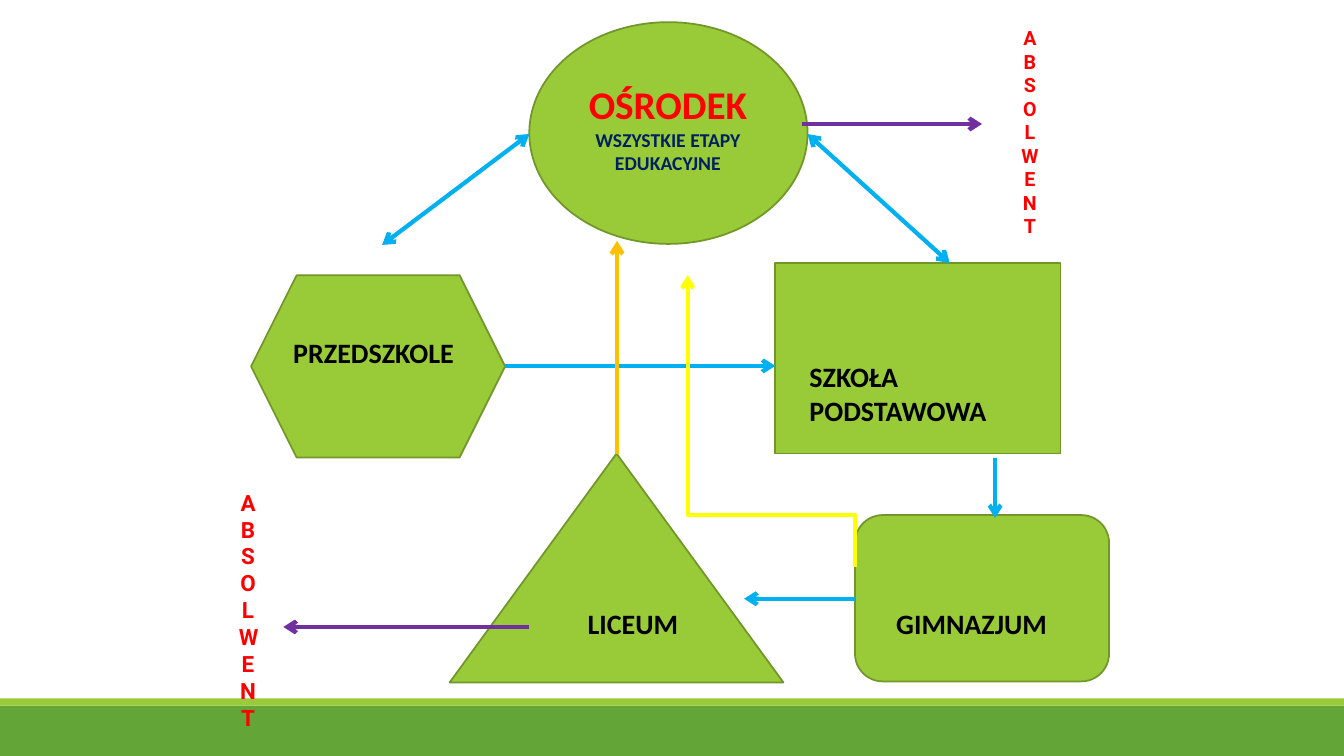
from dataclasses import dataclass

import pptx
import pptx.dml.color
import pptx.enum.shapes
import pptx.enum.text
import pptx.oxml
import pptx.oxml.ns
import pptx.util
from lxml import etree

SHAPE = pptx.enum.shapes.MSO_SHAPE
CONNECTOR = pptx.enum.shapes.MSO_CONNECTOR
ALIGN = pptx.enum.text.PP_ALIGN
EMU_PER_PX = 9144  # 100 px to the inch


@dataclass(frozen=True)
class Theme:
    green: str = "99CB38"
    outline: str = "719629"
    footer: str = "63A537"
    black: str = "000000"
    red: str = "FF0000"
    navy: str = "002060"
    blue: str = "00B0F0"
    orange: str = "FFC000"
    purple: str = "7030A0"
    yellow: str = "FFFF00"
    body_font: str = "Calibri"
    graduate_font: str = "Roboto"
    title_size: int = 28
    label_size: int = 20
    graduate_size: int = 16
    small_size: int = 14
    outline_width: float = 1.25
    arrow_width: int = 3


def px(value):
    return pptx.util.Emu(value * EMU_PER_PX)


def rgb(color):
    return pptx.dml.color.RGBColor.from_string(color)


class Diagram:
    def __init__(self, slide, theme):
        self.slide = slide
        self.theme = theme

    def block(self, kind, left, top, width, height, fill=None, outlined=True):
        shape = self.slide.shapes.add_shape(kind, px(left), px(top), px(width), px(height))
        shape.shadow.inherit = False
        shape.fill.solid()
        shape.fill.fore_color.rgb = rgb(fill or self.theme.green)
        if outlined:
            shape.line.color.rgb = rgb(self.theme.outline)
            shape.line.width = pptx.util.Pt(self.theme.outline_width)
        else:
            shape.line.fill.background()

    def text(self, left, top, width, height, lines, align=ALIGN.LEFT, font=None):
        """Each line is (text, size, color) and becomes a bold paragraph."""
        box = self.slide.shapes.add_textbox(px(left), px(top), px(width), px(height))
        frame = box.text_frame
        frame.word_wrap = True
        frame.auto_size = pptx.enum.text.MSO_AUTO_SIZE.SHAPE_TO_FIT_TEXT
        for index, (content, size, color) in enumerate(lines):
            paragraph = frame.add_paragraph() if index else frame.paragraphs[0]
            paragraph.text = content
            paragraph.alignment = align
            paragraph.font.name = font or self.theme.body_font
            paragraph.font.size = pptx.util.Pt(size)
            paragraph.font.bold = True
            paragraph.font.color.rgb = rgb(color)

    def label(self, left, top, width, height, content):
        self.text(left, top, width, height, [(content, self.theme.label_size, self.theme.black)])

    def vertical_word(self, left, top, width, height, word, size):
        lines = [(letter, size, self.theme.red) for letter in word]
        self.text(left, top, width, height, lines, ALIGN.CENTER, self.theme.graduate_font)

    def arrow(self, start, end, color, both_ends=False, kind=CONNECTOR.STRAIGHT):
        connector = self.slide.shapes.add_connector(kind, *map(px, start + end))
        connector.line.color.rgb = rgb(color)
        connector.line.width = pptx.util.Pt(self.theme.arrow_width)
        line = connector.line._get_or_add_ln()
        for tag in ("a:headEnd", "a:tailEnd") if both_ends else ("a:tailEnd",):
            etree.SubElement(line, pptx.oxml.ns.qn(tag), type="arrow")
        etree.SubElement(connector._element.spPr, pptx.oxml.ns.qn("a:effectLst"))
        return connector

    def upward_elbow(self, start, end, color, bend):
        """Elbow that leaves and arrives vertically: a flat one turned by 270 degrees."""
        center_x, center_y = (start[0] + end[0]) // 2, (start[1] + end[1]) // 2
        half_width, half_height = (start[0] - end[0]) // 2, (start[1] - end[1]) // 2
        connector = self.arrow(
            (center_x - half_height, center_y + half_width),
            (center_x + half_height, center_y - half_width),
            color, kind=CONNECTOR.ELBOW)
        properties = connector._element.spPr
        properties.xfrm.set("rot", str(270 * 60000))
        adjustments = properties.find(".//" + pptx.oxml.ns.qn("a:avLst"))
        etree.SubElement(adjustments, pptx.oxml.ns.qn("a:gd"),
                         name="adj1", fmla=f"val {round(bend * 100000)}")


def main():
    theme = Theme()
    presentation = pptx.Presentation()
    presentation.slide_width = pptx.util.Inches(13.33)
    presentation.slide_height = pptx.util.Inches(7.5)
    slide = presentation.slides.add_slide(presentation.slide_layouts[6])
    diagram = Diagram(slide, theme)

    # Footer bands
    diagram.block(SHAPE.RECTANGLE, 0, 700, 1333, 50, theme.footer, outlined=False)
    diagram.block(SHAPE.RECTANGLE, 0, 693, 1333, 7, outlined=False)

    # School stages
    diagram.block(SHAPE.OVAL, 525, 22, 276, 220)
    diagram.block(SHAPE.HEXAGON, 249, 273, 252, 181)
    diagram.block(SHAPE.RECTANGLE, 769, 261, 283, 189)
    diagram.block(SHAPE.ISOSCELES_TRIANGLE, 446, 450, 331, 227)
    diagram.block(SHAPE.ROUNDED_RECTANGLE, 848, 511, 252, 165)

    # Stage names
    diagram.label(793, 352, 244, 77, "SZKOŁA PODSTAWOWA")
    diagram.label(573, 597, 133, 44, "LICEUM")
    diagram.label(879, 597, 189, 44, "GIMNAZJUM")
    diagram.label(281, 328, 197, 44, "PRZEDSZKOLE")

    # Paths between stages
    diagram.arrow((525, 133), (379, 243), theme.blue, both_ends=True)
    diagram.arrow((501, 363), (769, 363), theme.blue)
    diagram.arrow((801, 133), (942, 261), theme.blue, both_ends=True)
    diagram.arrow((987, 454), (987, 514), theme.blue)
    diagram.arrow((848, 594), (738, 594), theme.blue)
    diagram.arrow((612, 450), (612, 239), theme.orange)

    # Paths to graduation
    diagram.arrow((525, 622), (281, 622), theme.purple)
    diagram.arrow((795, 123), (974, 123), theme.purple)
    diagram.vertical_word(990, 21, 63, 222, "ABSOLWENT", theme.small_size)
    diagram.vertical_word(227, 480, 38, 252, "ABSOLWENT", theme.graduate_size)

    # Return path and centre title
    diagram.upward_elbow((848, 564), (682, 273), theme.yellow, bend=0.18)
    diagram.text(556, 75, 213, 104, [
        ("OŚRODEK", theme.title_size, theme.red),
        ("WSZYSTKIE ETAPY EDUKACYJNE", theme.small_size, theme.navy),
    ], ALIGN.CENTER)

    presentation.save("out.pptx")


if __name__ == "__main__":
    main()
